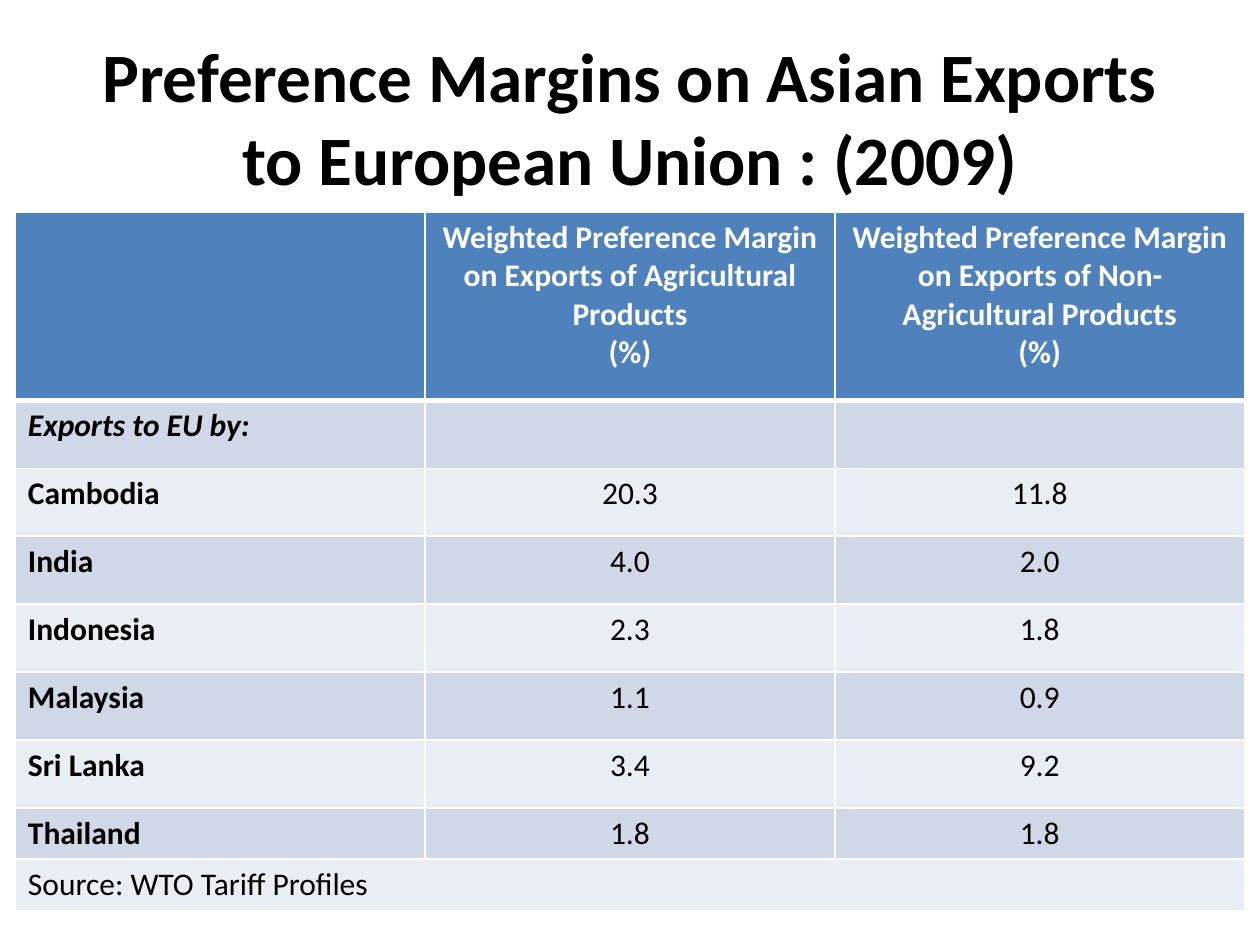
from lxml.etree import SubElement
from pptx import Presentation
from pptx.dml.color import RGBColor
from pptx.enum.text import MSO_ANCHOR, MSO_AUTO_SIZE, PP_ALIGN
from pptx.oxml.ns import qn
from pptx.util import Cm, Pt

BLACK = RGBColor(0x00, 0x00, 0x00)
WHITE = RGBColor(0xFF, 0xFF, 0xFF)
HEADER = RGBColor(0x4F, 0x81, 0xBD)
BAND_DARK = RGBColor(0xD0, 0xD8, 0xE8)
BAND_LIGHT = RGBColor(0xE9, 0xED, 0xF4)

HEADINGS = [
    "",
    "Weighted Preference Margin on Exports of Agricultural Products\n(%)",
    "Weighted Preference Margin on Exports of Non-Agricultural Products\n(%)",
]
MARGINS = [
    ("Cambodia", "20.3", "11.8"),
    ("India", "4.0", "2.0"),
    ("Indonesia", "2.3", "1.8"),
    ("Malaysia", "1.1", "0.9"),
    ("Sri Lanka", "3.4", "9.2"),
    ("Thailand", "1.8", "1.8"),
]
ROWS = [HEADINGS, ("Exports to EU by:", "", ""), *MARGINS,
        ("Source: WTO Tariff Profiles", "", "")]
ROW_HEIGHTS = [3.8] + [1.37] * 6 + [1.03] * 2


def write(tf, text, font="Calibri", size=18, color=BLACK, bold=False,
          italic=False, align=PP_ALIGN.LEFT):
    for i, line in enumerate(text.split("\n")):
        p = tf.add_paragraph() if i else tf.paragraphs[0]
        p.alignment = align
        p.font.size = Pt(size)
        if line:
            r = p.add_run()
            r.text = line
            r.font.name = font
            r.font.size = Pt(size)
            r.font.bold = bold
            r.font.italic = italic
            r.font.color.rgb = color


class Deck:
    def __init__(self, prs):
        self.prs = prs
        self.s = prs.slides.add_slide(prs.slide_layouts[5])

    def title(self, text, left, top, width, height):
        sp = self.s.shapes.title
        sp.left, sp.top, sp.width, sp.height = map(Cm, (left, top, width, height))
        tf = sp.text_frame
        tf.auto_size = MSO_AUTO_SIZE.NONE
        tf.vertical_anchor = MSO_ANCHOR.MIDDLE
        write(tf, text, size=39.6, bold=True, align=PP_ALIGN.CENTER)

    def borders(self, cell, **widths):
        for side, width in widths.items():
            ln = SubElement(cell._tc.get_or_add_tcPr(), qn(f"a:ln{side}"),
                            w=str(Pt(width)))
            fill = SubElement(ln, qn("a:solidFill"))
            SubElement(fill, qn("a:srgbClr"), val=str(WHITE))

    def table(self, rows, heights, left, top, col_width):
        cols = len(rows[0])
        tbl = self.s.shapes.add_table(
            len(rows), cols, Cm(left), Cm(top),
            Cm(col_width * cols), Cm(sum(heights))).table
        for col in tbl.columns:
            col.width = Cm(col_width)
        for i, (row, height) in enumerate(zip(rows, heights)):
            tbl.rows[i].height = Cm(height)
            band = HEADER if i == 0 else BAND_DARK if i % 2 else BAND_LIGHT
            for j, text in enumerate(row):
                cell = tbl.cell(i, j)
                self.borders(cell, L=1, R=1, T=3 if i == 1 else 1,
                             B=3 if i == 0 else 1)
                cell.fill.solid()
                cell.fill.fore_color.rgb = band
                write(cell.text_frame, text,
                      color=BLACK if i else WHITE,
                      bold=i == 0 or (j == 0 and i < len(rows) - 1),
                      italic=i == 1,
                      align=PP_ALIGN.CENTER if j else PP_ALIGN.LEFT)
        last = len(rows) - 1
        tbl.cell(last, 0).merge(tbl.cell(last, cols - 1))


def main():
    prs = Presentation()
    prs.slide_width, prs.slide_height = Cm(25.4), Cm(19.05)
    deck = Deck(prs)
    deck.title("Preference Margins on Asian Exports to European Union : (2009)",
               1.27, 0.76, 22.86, 3.18)
    deck.table(ROWS, ROW_HEIGHTS, 0.31, 4.27, 8.26)
    prs.save("out.pptx")


if __name__ == "__main__":
    main()
